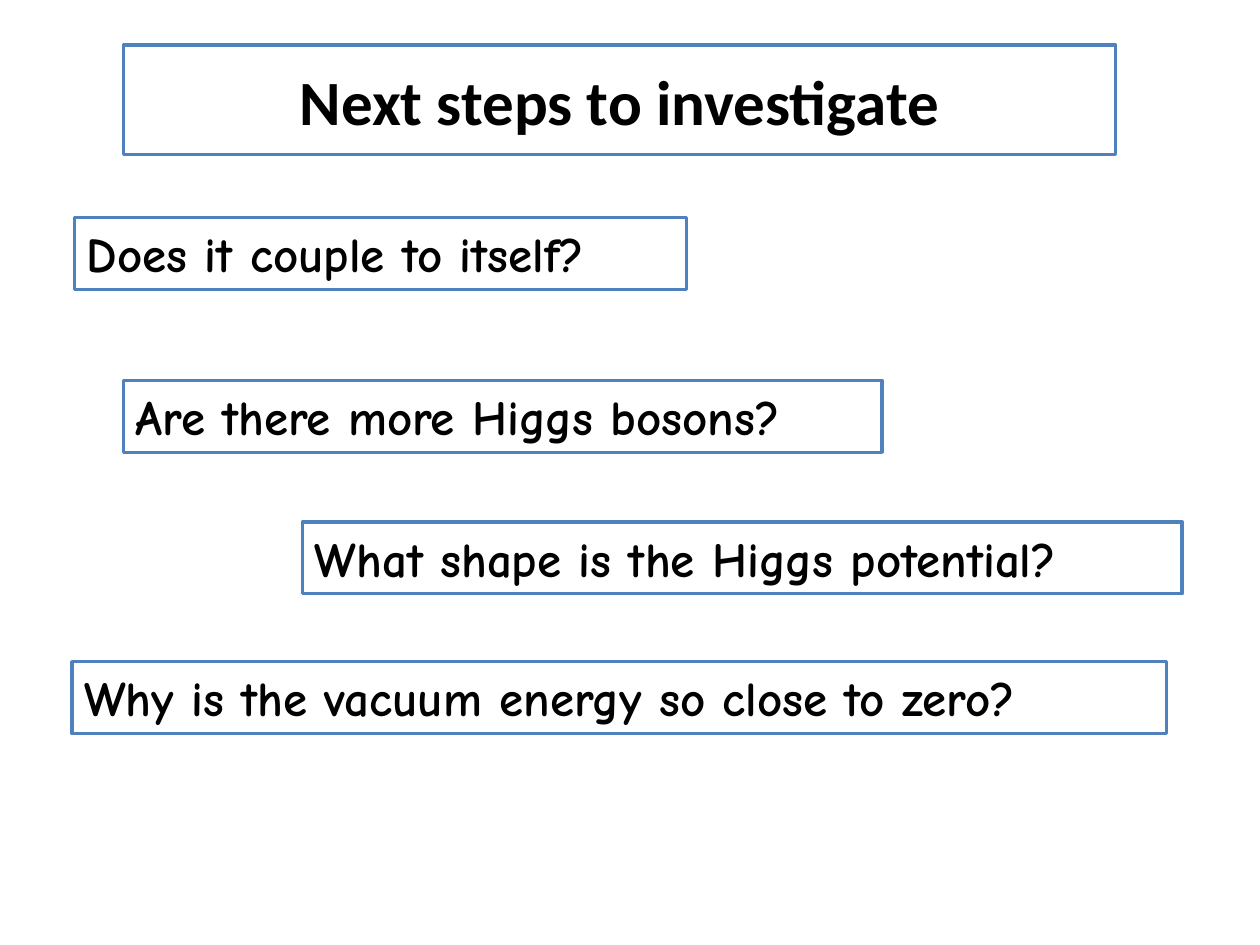
import pptx
import pptx.dml.color
import pptx.enum.shapes
import pptx.enum.text
import pptx.util
from pptx.util import Cm

BLACK = pptx.dml.color.RGBColor(0x00, 0x00, 0x00)
WHITE = pptx.dml.color.RGBColor(0xFF, 0xFF, 0xFF)
BLUE = pptx.dml.color.RGBColor(0x4F, 0x81, 0xBD)
ALIGN = pptx.enum.text.PP_ALIGN
ANCHOR = pptx.enum.text.MSO_ANCHOR

QUESTION_HEIGHT = 1.45

# Question, left, top and width in centimetres
QUESTIONS = [
    ("Does it couple to itself?", 1.5, 4.39, 12.34),
    ("Are there more Higgs bosons?", 2.49, 7.67, 15.29),
    ("What shape is the Higgs potential?", 6.1, 10.52, 17.73),
    ("Why is the vacuum energy so close to zero?", 1.45, 13.34, 22.07),
]


def set_text(shape, text, font="Comic Neue", size=28, align=ALIGN.LEFT, anchor=ANCHOR.TOP):
    """Write one bold black paragraph into a shape."""
    frame = shape.text_frame
    frame.word_wrap = True
    frame.vertical_anchor = anchor
    paragraph = frame.paragraphs[0]
    paragraph.alignment = align
    run = paragraph.add_run()
    run.text = text
    run.font.name = font
    run.font.size = pptx.util.Pt(size)
    run.font.bold = True
    run.font.color.rgb = BLACK


def add_box(slide, left, top, width, height):
    """Add a white rectangle with a blue outline."""
    shape = slide.shapes.add_shape(
        pptx.enum.shapes.MSO_SHAPE.RECTANGLE, Cm(left), Cm(top), Cm(width), Cm(height)
    )
    shape.shadow.inherit = False
    shape.fill.solid()
    shape.fill.fore_color.rgb = WHITE
    shape.line.color.rgb = BLUE
    shape.line.width = pptx.util.Pt(2)
    return shape


def main():
    presentation = pptx.Presentation()
    presentation.slide_width = Cm(25.4)
    presentation.slide_height = Cm(19.05)
    slide = presentation.slides.add_slide(presentation.slide_layouts[6])

    # Title
    title = add_box(slide, 2.49, 0.91, 20, 2.21)
    set_text(title, "Next steps to investigate", font="Calibri", size=36,
             align=ALIGN.CENTER, anchor=ANCHOR.MIDDLE)

    # Open questions
    for question, left, top, width in QUESTIONS:
        box = add_box(slide, left, top, width, QUESTION_HEIGHT)
        set_text(box, question)

    presentation.save("out.pptx")


if __name__ == "__main__":
    main()
